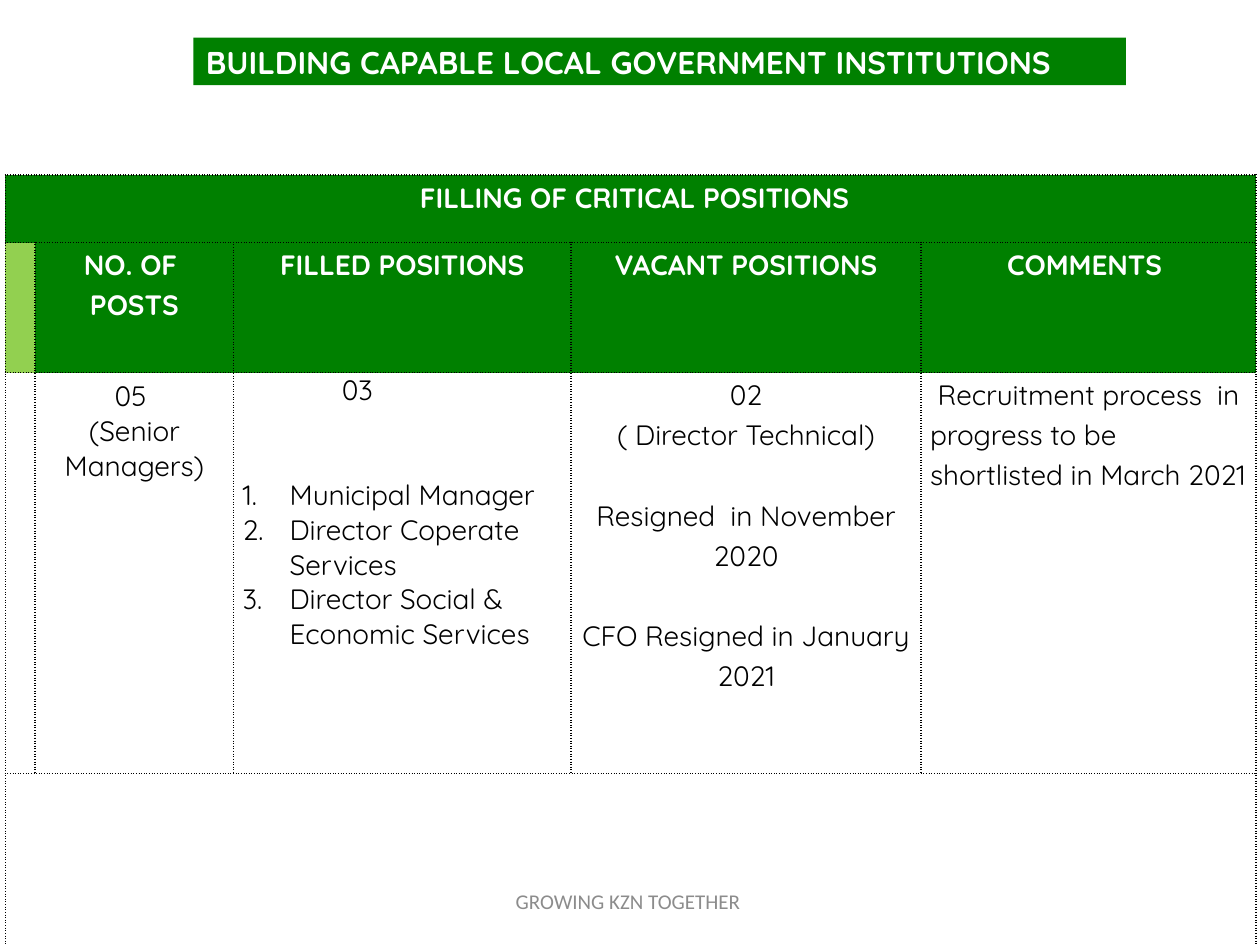
from pptx import Presentation
from pptx.dml.color import RGBColor
from pptx.enum import shapes, text
from pptx.oxml import parse_xml
from pptx.oxml.ns import nsdecls
from pptx.util import Cm, Pt

HUES = {"green": "008000", "lime": "92D050", "white": "FFFFFF",
        "black": "000000", "grey": "8C8C8C"}
MID, LEFT = text.PP_ALIGN.CENTER, text.PP_ALIGN.LEFT
COLS = [0.6, 4, 6.8, 7.06, 6.75]
ROWS = [1.36, 2.62, 8.08, 4.98]
HEADS = ["NO. OF  POSTS", "FILLED POSITIONS", "VACANT POSITIONS", "COMMENTS "]
POSTS = ["05 ", "(Senior Managers)"]
FILLED = ["Municipal Manager", "Director Coperate Services",
          "Director Social & Economic Services"]
VACANT = [("02", 0), ("( Director Technical)", 0),
          ("Resigned  in November 2020", 23),
          ("CFO Resigned in January 2021", 23)]
NOTE = " Recruitment process  in progress to be shortlisted in March 2021"


def rgb(hue):
    """Return the named colour."""
    return RGBColor.from_string(HUES[hue])


def style(para, words, size, hue, bold=False, face="Quicksand", align=LEFT):
    """Fill a paragraph with words in one font."""
    para.text = words
    para.alignment = align
    font = para.font
    font.name, font.size, font.bold = face, Pt(size), bold
    font.color.rgb = rgb(hue)


def write(cell, lines, hue="black", bold=False, align=MID, lead=1.15):
    """Write (words, gap before) lines into a cell and return the paragraphs."""
    frame = cell.text_frame
    for i, (words, gap) in enumerate(lines):
        para = frame.add_paragraph() if i else frame.paragraphs[0]
        style(para, words, 16, hue, bold, align=align)
        para.line_spacing = lead
        para.space_before = Pt(gap)
    return frame.paragraphs


def inset(cell):
    """Give a cell narrow sides and no top or bottom margin."""
    cell.margin_left = cell.margin_right = Cm(0.18)
    cell.margin_top = cell.margin_bottom = 0


def rule(cell):
    """Draw dotted lines on all four sides of a cell."""
    props = cell._tc.get_or_add_tcPr()
    for i, side in enumerate("LRTB"):
        props.insert(i, parse_xml(
            f'<a:ln{side} {nsdecls("a")} w="12700"><a:solidFill>'
            f'<a:srgbClr val="{HUES["black"]}"/></a:solidFill>'
            f'<a:prstDash val="sysDot"/></a:ln{side}>'))


def number(para):
    """Make a paragraph an item of a numbered list."""
    props = para._p.get_or_add_pPr()
    props.set("marL", str(Cm(0.95)))
    props.set("indent", str(-Cm(0.95)))
    props.append(parse_xml(
        f'<a:buAutoNum {nsdecls("a")} type="arabicPeriod"/>'))


def banner(slide, x, y, w, h):
    """Place the green title bar."""
    bar = slide.shapes.add_shape(
        shapes.MSO_SHAPE.RECTANGLE, Cm(x), Cm(y), Cm(w), Cm(h))
    bar.shadow.inherit = False
    bar.fill.solid()
    bar.fill.fore_color.rgb = rgb("green")
    bar.line.fill.background()
    frame = bar.text_frame
    frame.vertical_anchor = text.MSO_ANCHOR.MIDDLE
    style(frame.paragraphs[0], "BUILDING CAPABLE LOCAL GOVERNMENT INSTITUTIONS",
          18, "white", True)


def grid(slide, x, y):
    """Place the table of critical positions."""
    table = slide.shapes.add_table(
        len(ROWS), len(COLS), Cm(x), Cm(y), Cm(sum(COLS)), Cm(sum(ROWS))).table
    for col, w in zip(table.columns, COLS):
        col.width = Cm(w)
    for row, h in zip(table.rows, ROWS):
        row.height = Cm(h)
    for r, row in enumerate(table.rows):
        for c, cell in enumerate(row.cells):
            cell.fill.solid()
            cell.fill.fore_color.rgb = rgb("green" if r < 2 else "white")
            rule(cell)
            if (r, c) != (2, 1):
                inset(cell)
    table.cell(1, 0).fill.fore_color.rgb = rgb("lime")
    for r in (0, 3):
        table.cell(r, 0).merge(table.cell(r, len(COLS) - 1))

    write(table.cell(0, 0), [(" FILLING OF CRITICAL POSITIONS", 0)],
          "white", True)
    for c, head in enumerate(HEADS, 1):
        write(table.cell(1, c), [(head, 0)], "white", True)
    write(table.cell(2, 1), [(words, 0) for words in POSTS], lead=1.0)
    gaps = [40] + [0] * (len(FILLED) - 1)
    count, *items = write(table.cell(2, 2), [("03", 0), *zip(FILLED, gaps)],
                          align=LEFT, lead=1.0)
    count._p.get_or_add_pPr().set("marL", str(Cm(2)))
    for item in items:
        number(item)
    write(table.cell(2, 3), VACANT)
    write(table.cell(2, 4), [(NOTE, 0)], align=LEFT)


def footer(slide, x, y, w, h):
    """Place the motto at the foot of the slide."""
    frame = slide.shapes.add_textbox(Cm(x), Cm(y), Cm(w), Cm(h)).text_frame
    frame.word_wrap = True
    frame.vertical_anchor = text.MSO_ANCHOR.MIDDLE
    style(frame.paragraphs[0], "GROWING KZN TOGETHER ", 12, "grey",
          face="Calibri", align=MID)


def main():
    """Build and save the slide."""
    deck = Presentation()
    deck.slide_width, deck.slide_height = Cm(25.4), Cm(19.05)
    slide = deck.slides.add_slide(deck.slide_layouts[6])
    grid(slide, 0.11, 3.53)
    banner(slide, 3.9, 0.76, 18.8, 0.96)
    footer(slide, 8.69, 17.66, 8.04, 1.01)
    deck.save("out.pptx")


if __name__ == "__main__":
    main()
